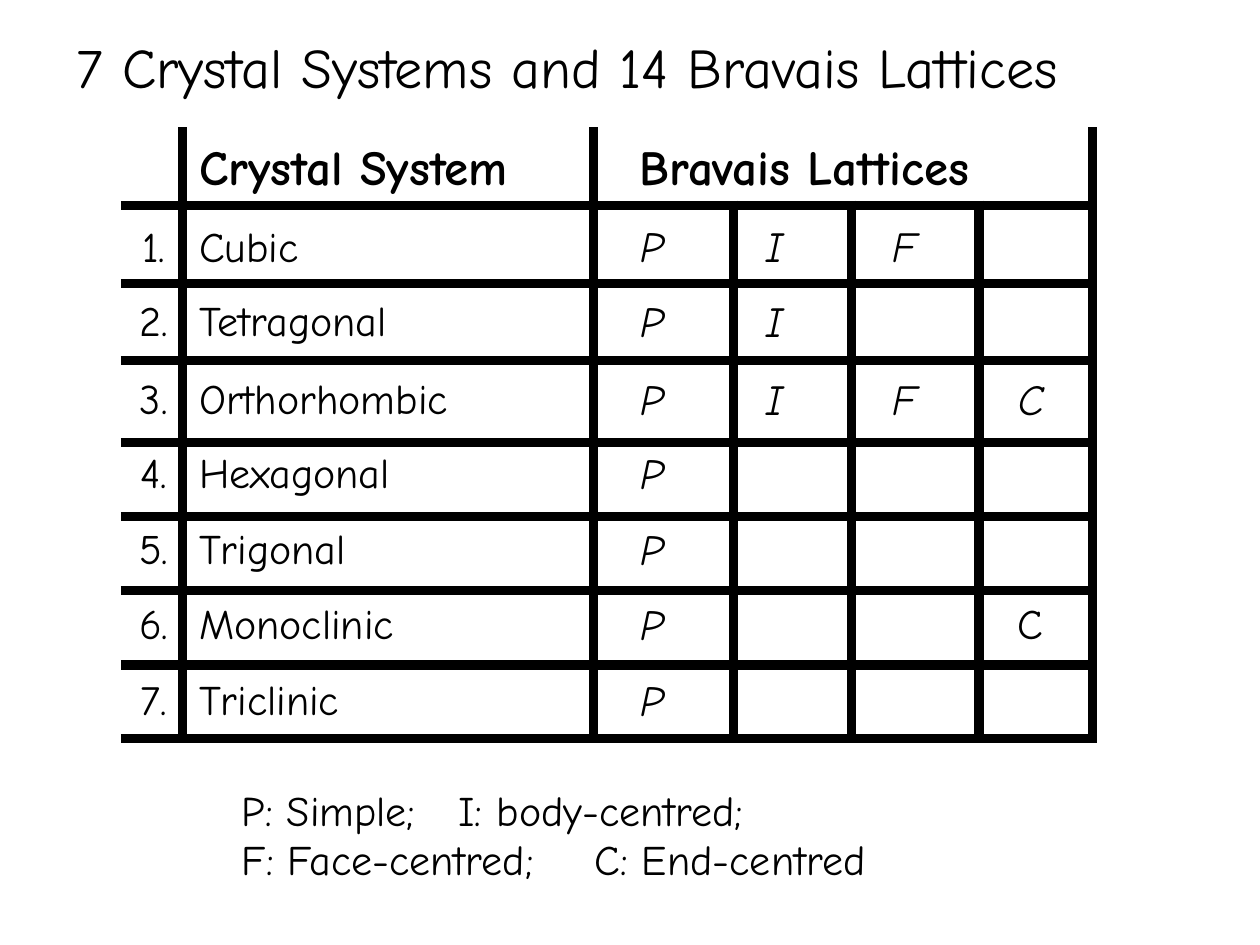
from lxml import etree
from pptx import Presentation, util as u
from pptx.dml.color import RGBColor
from pptx.enum import text as t
from pptx.oxml import ns

BLACK = RGBColor(0, 0, 0)
FONT = "Comic Neue"
TITLE = "7 Crystal Systems and 14 Bravais Lattices"
HEAD = ("", "Crystal System", "Bravais Lattices")
SYSTEMS = [
    ("Cubic", "PIF"),
    ("Tetragonal", "PI"),
    ("Orthorhombic", "PIFC"),
    ("Hexagonal", "P"),
    ("Trigonal", "P"),
    ("Monoclinic", "PC"),
    ("Triclinic", "P"),
]
KEY = [
    ("P: Simple;\tI: body-centred;", 1.72),
    ("F: Face-centred;\tC: End-centred", 2.8),
]
COLS = (0.49, 3.26, 1.11, 0.94, 1.01, 0.9)
ROWS = (0.62, 0.62, 0.61, 0.65, 0.59, 0.59, 0.59, 0.58)
TOPS = (0.11, 0.15, 0.12, 0.13, 0.07, 0.08, 0.09, 0.1)
INDENTS = (0.03, 0.13, 0.37, 0.26, 0.32, 0.31)
LETTERS = "PIFC"


def write(para, words, size=24, bold=False, italic=False, align=t.PP_ALIGN.LEFT):
    para.alignment = align
    run = para.add_run()
    run.text = words
    font = run.font
    font.name, font.size = FONT, u.Pt(size)
    font.bold, font.italic = bold, italic
    font.color.rgb = BLACK


def add_box(slide, left, top, width, height):
    box = slide.shapes.add_textbox(*map(u.Inches, (left, top, width, height)))
    frame = box.text_frame
    frame.word_wrap = True
    frame.margin_left = frame.margin_top = u.Inches(0.01)
    frame.margin_right = frame.margin_bottom = 0
    return frame


def add_edges(cell, row, col):
    last = len(COLS) - 1
    shown = {
        "L": col > 0 and (row > 0 or col < 3),
        "R": row > 0 or col < 3 or col == last,
        "T": row > 0,
        "B": True,
    }
    props = cell._tc.get_or_add_tcPr()
    for side, on in shown.items():
        line = etree.SubElement(props, ns.qn("a:ln" + side), w=str(u.Pt(6)))
        if on:
            fill = etree.SubElement(line, ns.qn("a:solidFill"))
            etree.SubElement(fill, ns.qn("a:srgbClr"), val=str(BLACK))
        else:
            etree.SubElement(line, ns.qn("a:noFill"))
    cell.fill.background()


def add_grid(slide):
    size = map(u.Inches, (0.96, 1.01, sum(COLS), sum(ROWS)))
    grid = slide.shapes.add_table(len(ROWS), len(COLS), *size).table
    grid.first_row = grid.horz_banding = False
    for col, width in zip(grid.columns, COLS):
        col.width = u.Inches(width)
    for row, height in zip(grid.rows, ROWS):
        row.height = u.Inches(height)
    for r, top in enumerate(TOPS):
        for c, left in enumerate(INDENTS):
            cell = grid.cell(r, c)
            cell.margin_left, cell.margin_top = u.Inches(left), u.Inches(top)
            cell.margin_right = cell.margin_bottom = 0
            add_edges(cell, r, c)
    grid.cell(0, 2).merge(grid.cell(0, len(COLS) - 1))

    def put(r, c, words, **form):
        write(grid.cell(r, c).text_frame.paragraphs[0], words, **form)

    for c, words in enumerate(HEAD):
        if words:
            put(0, c, words, size=28, bold=True)
    for r, (name, kinds) in enumerate(SYSTEMS, 1):
        put(r, 0, f"{r}.", align=t.PP_ALIGN.CENTER)
        put(r, 1, name)
        for kind in kinds:
            plain = (name, kind) == ("Monoclinic", "C")
            put(r, 2 + LETTERS.index(kind), kind,
                size=24 if plain else 24.5, italic=not plain)


def add_key(slide):
    frame = add_box(slide, 1.91, 6.22, 5.16, 0.82)
    for n, (words, stop) in enumerate(KEY):
        para = frame.add_paragraph() if n else frame.paragraphs[0]
        write(para, words)
        para.line_spacing = u.Pt(28.4)
        tabs = etree.SubElement(para._p.get_or_add_pPr(), ns.qn("a:tabLst"))
        etree.SubElement(tabs, ns.qn("a:tab"), pos=str(u.Inches(stop)), algn="l")


def main():
    deck = Presentation()
    deck.slide_width, deck.slide_height = u.Inches(10), u.Inches(7.5)
    slide = deck.slides.add_slide(deck.slide_layouts[6])
    add_grid(slide)
    add_key(slide)
    write(add_box(slide, 0.6, 0.25, 8.75, 0.56).paragraphs[0], TITLE, size=32)
    deck.save("out.pptx")


if __name__ == "__main__":
    main()
